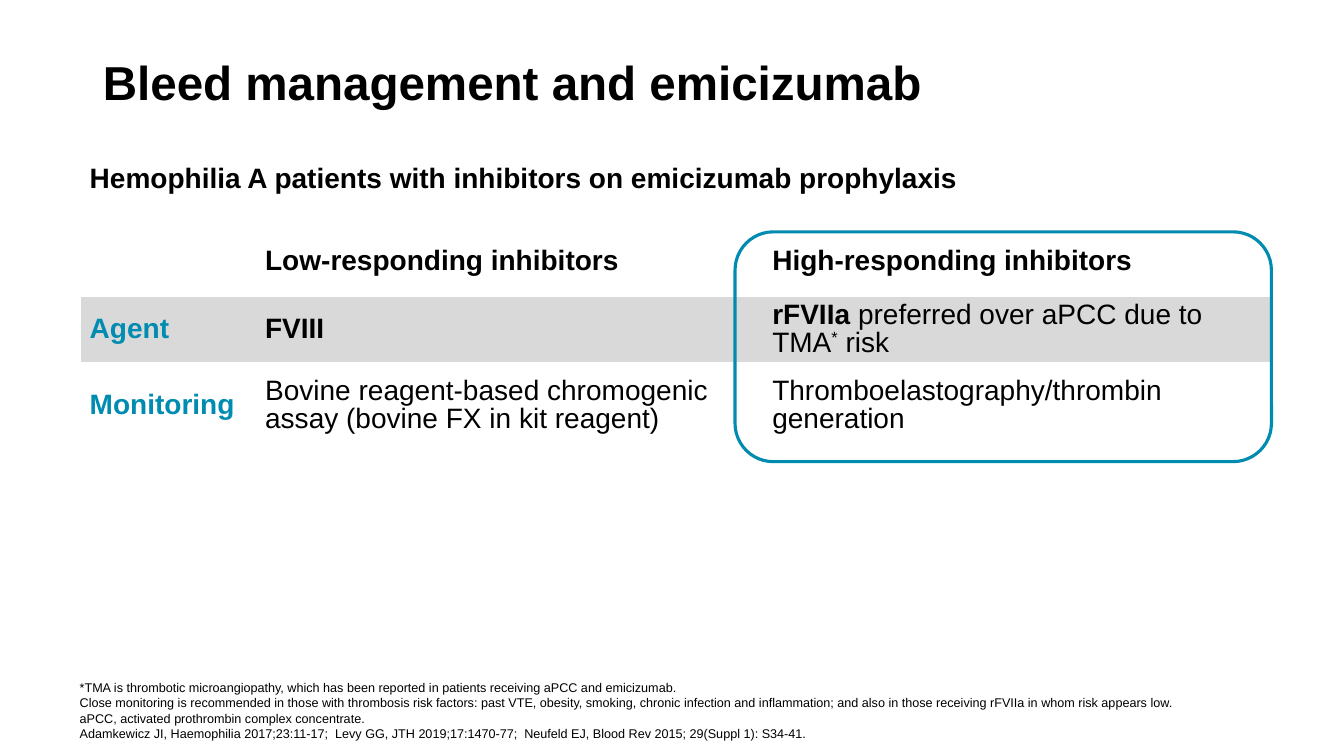
from typing import NamedTuple

from lxml import etree
from pptx import Presentation
from pptx.dml.color import RGBColor
from pptx.enum import shapes, text
from pptx.oxml.ns import qn
from pptx.util import Inches, Pt

FONT = "Arial"
COLORS = {"text": "000000", "accent": "008BB0", "band": "D9D9D9", "plain": "FFFFFF"}
NO_STYLE_NO_GRID = "{2D5ABB26-0587-4C30-8999-92F81FD0307C}"


class Span(NamedTuple):
    text: str
    bold: bool = False
    color: str = "text"
    baseline: int = 0


class Row(NamedTuple):
    height: float
    fill: str
    cells: list[list[Span]]


class Box(NamedTuple):
    left: float
    top: float
    width: float
    height: float

    def lengths(self) -> list[int]:
        return [Inches(v) for v in self]


COL_WIDTHS = [1.74, 5.03, 5.03]
HEADING = "Hemophilia A patients with inhibitors on emicizumab prophylaxis"
ROWS = [
    Row(0.85, "plain", [[Span(HEADING, True)], [], []]),
    Row(0.7, "plain", [[], [Span("Low-responding inhibitors", True)],
                       [Span("High-responding inhibitors", True)]]),
    Row(0.64, "band", [[Span("Agent", True, "accent")], [Span("FVIII", True)],
                       [Span("rFVIIa", True), Span(" preferred over aPCC due to TMA"),
                        Span("*", baseline=30000), Span(" risk")]]),
    Row(0.88, "plain", [[Span("Monitoring", True, "accent")],
                        [Span("Bovine reagent-based chromogenic assay (bovine FX in kit reagent)")],
                        [Span("Thromboelastography/thrombin generation")]]),
]
FOOTNOTES = [
    "*TMA is thrombotic microangiopathy, which has been reported in patients receiving aPCC and emicizumab.",
    "Close monitoring is recommended in those with thrombosis risk factors: past VTE, obesity, smoking, "
    "chronic infection and inflammation; and also in those receiving rFVIIa in whom risk appears low.",
    "aPCC, activated prothrombin complex concentrate.",
    "Adamkewicz JI, Haemophilia 2017;23:11-17;  Levy GG, JTH 2019;17:1470-77;  "
    "Neufeld EJ, Blood Rev 2015; 29(Suppl 1): S34-41.",
]


def rgb(name: str) -> RGBColor:
    return RGBColor.from_string(COLORS[name])


def style_font(font, size: float, bold: bool = False, color: str = "text") -> None:
    font.name, font.size, font.bold = FONT, Pt(size), bold
    font.color.rgb = rgb(color)


def place(sp, box: Box, anchor: text.MSO_ANCHOR):
    """Move a placeholder and fix its text frame; return the frame."""
    sp.left, sp.top, sp.width, sp.height = box.lengths()
    tf = sp.text_frame
    tf.word_wrap = True
    tf.auto_size = text.MSO_AUTO_SIZE.NONE
    tf.vertical_anchor = anchor
    return tf


def add_title(s) -> None:
    tf = place(s.shapes.title, Box(0.92, 0.25, 11.5, 1.19), text.MSO_ANCHOR.MIDDLE)
    tf.text = "Bleed management and emicizumab"
    p = tf.paragraphs[0]
    p.alignment = text.PP_ALIGN.LEFT
    p.line_spacing = 0.9
    style_font(p.runs[0].font, 34, True)


def add_footnotes(s) -> None:
    tf = place(s.placeholders[1], Box(0.69, 6.95, 11.08, 0.4), text.MSO_ANCHOR.BOTTOM)
    tf.margin_bottom = 0
    tf.text = "\n".join(FOOTNOTES)
    for p in tf.paragraphs:
        p.space_before = Pt(0)
        pPr = p._p.get_or_add_pPr()
        pPr.set("marL", "0")
        pPr.set("indent", "0")
        etree.SubElement(pPr, qn("a:buNone"))
        style_font(p.runs[0].font, 9)


def fill_cell(cell, spans: list[Span], fill: str) -> None:
    cell.fill.solid()
    cell.fill.fore_color.rgb = rgb(fill)
    cell.vertical_anchor = text.MSO_ANCHOR.MIDDLE
    cell.margin_left = cell.margin_right = Inches(0.09)
    cell.margin_top = cell.margin_bottom = Inches(0.03)
    p = cell.text_frame.paragraphs[0]
    p.line_spacing = 0.9
    for span in spans:
        r = p.add_run()
        r.text = span.text
        style_font(r.font, 20, span.bold, span.color)
        if span.baseline:
            r.font._element.set("baseline", str(span.baseline))


def add_inhibitor_table(s) -> None:
    box = Box(0.8, 1.4, sum(COL_WIDTHS), sum(row.height for row in ROWS))
    table = s.shapes.add_table(len(ROWS), len(COL_WIDTHS), *box.lengths()).table
    table.first_row = table.horz_banding = False
    table._tbl.tblPr.find(qn("a:tableStyleId")).text = NO_STYLE_NO_GRID
    for col, width in zip(table.columns, COL_WIDTHS):
        col.width = Inches(width)
    for i, row in enumerate(ROWS):
        table.rows[i].height = Inches(row.height)
        for j, spans in enumerate(row.cells):
            fill_cell(table.cell(i, j), spans, row.fill)
    heading = table.cell(0, 0)
    heading.merge(table.cell(0, len(COL_WIDTHS) - 1))
    heading.vertical_anchor = text.MSO_ANCHOR.BOTTOM
    heading.margin_top, heading.margin_bottom = 0, Inches(0.32)


def add_highlight(s) -> None:
    box = Box(7.29, 2.3, 5.32, 2.28)
    sp = s.shapes.add_shape(shapes.MSO_SHAPE.ROUNDED_RECTANGLE, *box.lengths())
    sp.shadow.inherit = False
    sp.fill.background()
    sp.line.color.rgb = rgb("accent")
    sp.line.width = Pt(2.25)


def main() -> None:
    prs = Presentation()
    prs.slide_width, prs.slide_height = Inches(13.33), Inches(7.5)
    s = prs.slides.add_slide(prs.slide_layouts[1])
    add_title(s)
    add_footnotes(s)
    add_inhibitor_table(s)
    add_highlight(s)
    prs.save("out.pptx")


if __name__ == "__main__":
    main()
